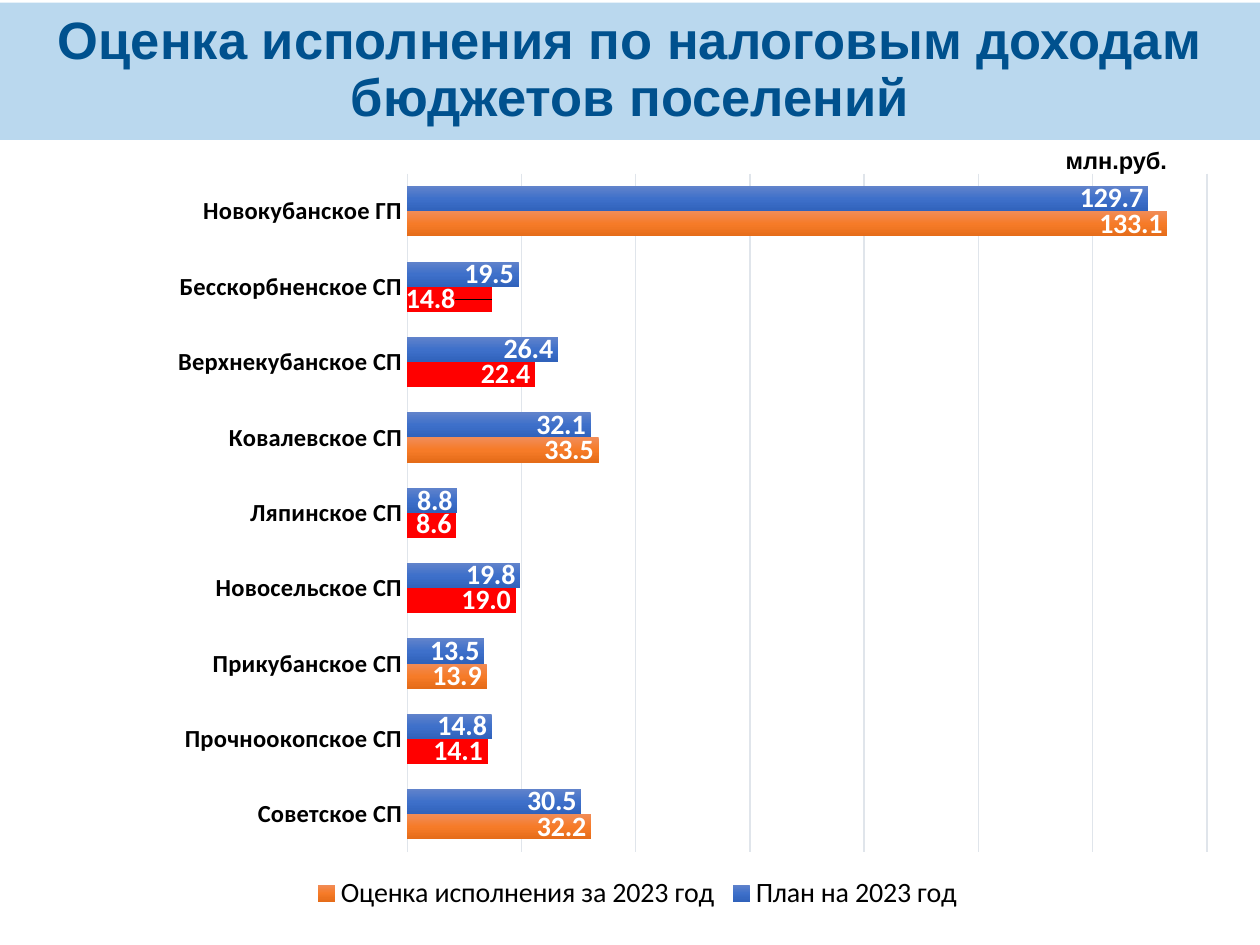
import lxml.etree
import pptx
import pptx.chart.data
import pptx.dml.color
import pptx.enum.chart
import pptx.enum.text
import pptx.oxml
import pptx.oxml.ns
import pptx.util

Inches = pptx.util.Inches
qn = pptx.oxml.ns.qn

NUMBER_FORMAT = "#\\ ##0.0"
GRID_COLOR = "E0E5EB"
SETTLEMENTS = [
    "Новокубанское ГП", "Бесскорбненское СП", "Верхнекубанское СП",
    "Ковалевское СП", "Ляпинское СП", "Новосельское СП",
    "Прикубанское СП", "Прочноокопское СП", "Советское СП",
]
PLAN = [129.7, 19.5, 26.4, 32.1, 8.8, 19.8, 13.5, 14.8, 30.5]
ESTIMATE = [133.1, 14.8, 22.4, 33.5, 8.6, 19.0, 13.9, 14.1, 32.2]
PLAN_GRADIENT = ["6183CB", "3E70CA", "3062BB"]
ESTIMATE_GRADIENT = ["F18C57", "F67B28", "E56C19"]


def rgb(color):
    return pptx.dml.color.RGBColor.from_string(color)


def style_font(font, size, color, bold=False, name="Calibri"):
    font.name = name
    font.size = pptx.util.Pt(size)
    font.bold = bold
    font.color.rgb = rgb(color)


def style_line(line):
    line.color.rgb = rgb(GRID_COLOR)
    line.width = pptx.util.Pt(0.75)


def place(shape, left, top, width, height):
    shape.left, shape.top = Inches(left), Inches(top)
    shape.width, shape.height = Inches(width), Inches(height)


def add_manual_layout(parent, index, **values):
    """Insert a c:layout element holding the given settings in order."""
    layout = pptx.oxml.parse_xml(f'<c:layout {pptx.oxml.ns.nsdecls("c")}/>')
    manual = lxml.etree.SubElement(layout, qn("c:manualLayout"))
    for name, value in values.items():
        lxml.etree.SubElement(manual, qn(f"c:{name}")).set("val", str(value))
    parent.insert(index, layout)


def fill_gradient(fill, colors):
    """Fill downwards with evenly spaced colour stops."""
    fill.gradient()
    gradient = fill._xPr.find(qn("a:gradFill"))
    stops = gradient.find(qn("a:gsLst"))
    for stop in list(stops):
        stops.remove(stop)
    for index, color in enumerate(colors):
        stop = lxml.etree.SubElement(stops, qn("a:gs"))
        stop.set("pos", str(100000 * index // (len(colors) - 1)))
        lxml.etree.SubElement(stop, qn("a:srgbClr")).set("val", color)
    gradient.find(qn("a:lin")).set("ang", str(90 * 60000))


def style_labels(labels):
    style_font(labels.font, 16, "FFFFFF", bold=True)
    labels.position = pptx.enum.chart.XL_LABEL_POSITION.INSIDE_END


def style_series(series, colors, label_shifts):
    """Colour the bars and move the labels listed as point: (x, y)."""
    fill_gradient(series.format.fill, colors)
    series.invert_if_negative = False
    labels = series.data_labels
    style_labels(labels)
    labels.show_value = True
    labels.number_format = NUMBER_FORMAT
    labels.number_format_is_linked = False
    for point, (x, y) in label_shifts.items():
        style_labels(series.points[point].data_label)
        label = labels._element.xpath(f"c:dLbl[c:idx/@val='{point}']")[0]
        add_manual_layout(label, 1, x=x, y=y)
        number_format = label.makeelement(qn("c:numFmt"), {
            "formatCode": NUMBER_FORMAT, "sourceLinked": "0"})
        label.insert(2, number_format)


def style_axes(chart):
    category_axis = chart.category_axis
    category_axis.reverse_order = True
    category_axis.major_tick_mark = pptx.enum.chart.XL_TICK_MARK.NONE
    style_font(category_axis.tick_labels.font, 14, "000000", bold=True)
    style_line(category_axis.format.line)
    value_axis = chart.value_axis
    value_axis.visible = False
    value_axis.minimum_scale, value_axis.maximum_scale = 0, 140
    value_axis.major_unit = 20
    value_axis.tick_labels.number_format = NUMBER_FORMAT
    value_axis.tick_labels.number_format_is_linked = False
    style_line(value_axis.major_gridlines.format.line)


def add_revenue_chart(slide, left, top, width, height):
    data = pptx.chart.data.CategoryChartData(number_format=NUMBER_FORMAT)
    data.categories = SETTLEMENTS
    data.add_series("План на 2023 год", PLAN)
    data.add_series("Оценка исполнения за 2023 год", ESTIMATE)
    chart = slide.shapes.add_chart(
        pptx.enum.chart.XL_CHART_TYPE.BAR_CLUSTERED, Inches(left),
        Inches(top), Inches(width), Inches(height), data).chart
    style_font(chart.font, 10, "000000")
    chart.has_title = False
    chart.has_legend = True
    chart.legend.position = pptx.enum.chart.XL_LEGEND_POSITION.BOTTOM
    chart.legend.include_in_layout = False
    style_font(chart.legend.font, 16, "000000")
    style_axes(chart)

    plot = chart.plots[0]
    plot.gap_width, plot.overlap = 100, 0
    plot.vary_by_categories = False
    plan, estimate = plot.series
    style_series(plan, PLAN_GRADIENT, {4: (0, 0.002)})
    style_series(estimate, ESTIMATE_GRADIENT,
                 {1: (-0.027, 0), 4: (0, -0.002)})
    for index, (planned, estimated) in enumerate(zip(PLAN, ESTIMATE)):
        if estimated < planned:
            fill = estimate.points[index].format.fill
            fill.solid()
            fill.fore_color.rgb = rgb("FF0000")

    plot_area = chart._chartSpace.chart.plotArea
    for layout in plot_area.findall(qn("c:layout")):
        plot_area.remove(layout)
    add_manual_layout(plot_area, 0, layoutTarget="inner", xMode="edge",
                      yMode="edge", x=0.303, y=0.023, w=0.684, h=0.893)


def add_title(slide, left, top, width, height):
    title = slide.shapes.title
    place(title, left, top, width, height)
    title.fill.solid()
    title.fill.fore_color.rgb = rgb("BAD8EE")
    frame = title.text_frame
    frame.vertical_anchor = pptx.enum.text.MSO_ANCHOR.MIDDLE
    paragraph = frame.paragraphs[0]
    paragraph.alignment = pptx.enum.text.PP_ALIGN.CENTER
    paragraph.line_spacing = 0.9
    lines = ["Оценка исполнения по налоговым доходам", "бюджетов поселений"]
    for index, line in enumerate(lines):
        if index:
            paragraph.add_line_break()
        run = paragraph.add_run()
        run.text = line
        style_font(run.font, 30, "00518E", bold=True, name="Arial")


def add_unit_note(slide, left, top, width, height):
    note = slide.shapes.add_textbox(
        Inches(left), Inches(top), Inches(width), Inches(height))
    note.text_frame.word_wrap = True
    note.text_frame.auto_size = pptx.enum.text.MSO_AUTO_SIZE.SHAPE_TO_FIT_TEXT
    run = note.text_frame.paragraphs[0].add_run()
    run.text = "млн.руб."
    style_font(run.font, 13.5, "000000", bold=True, name="Arial")


def main():
    presentation = pptx.Presentation()
    presentation.slide_width = Inches(10)
    presentation.slide_height = Inches(7.5)
    slide = presentation.slides.add_slide(presentation.slide_layouts[5])
    add_title(slide, 0, 0.02, 10, 1.09)
    add_revenue_chart(slide, 0.42, 1.24, 9.28, 6.03)
    add_unit_note(slide, 8.36, 1.11, 1.09, 0.33)
    presentation.save("out.pptx")


if __name__ == "__main__":
    main()
